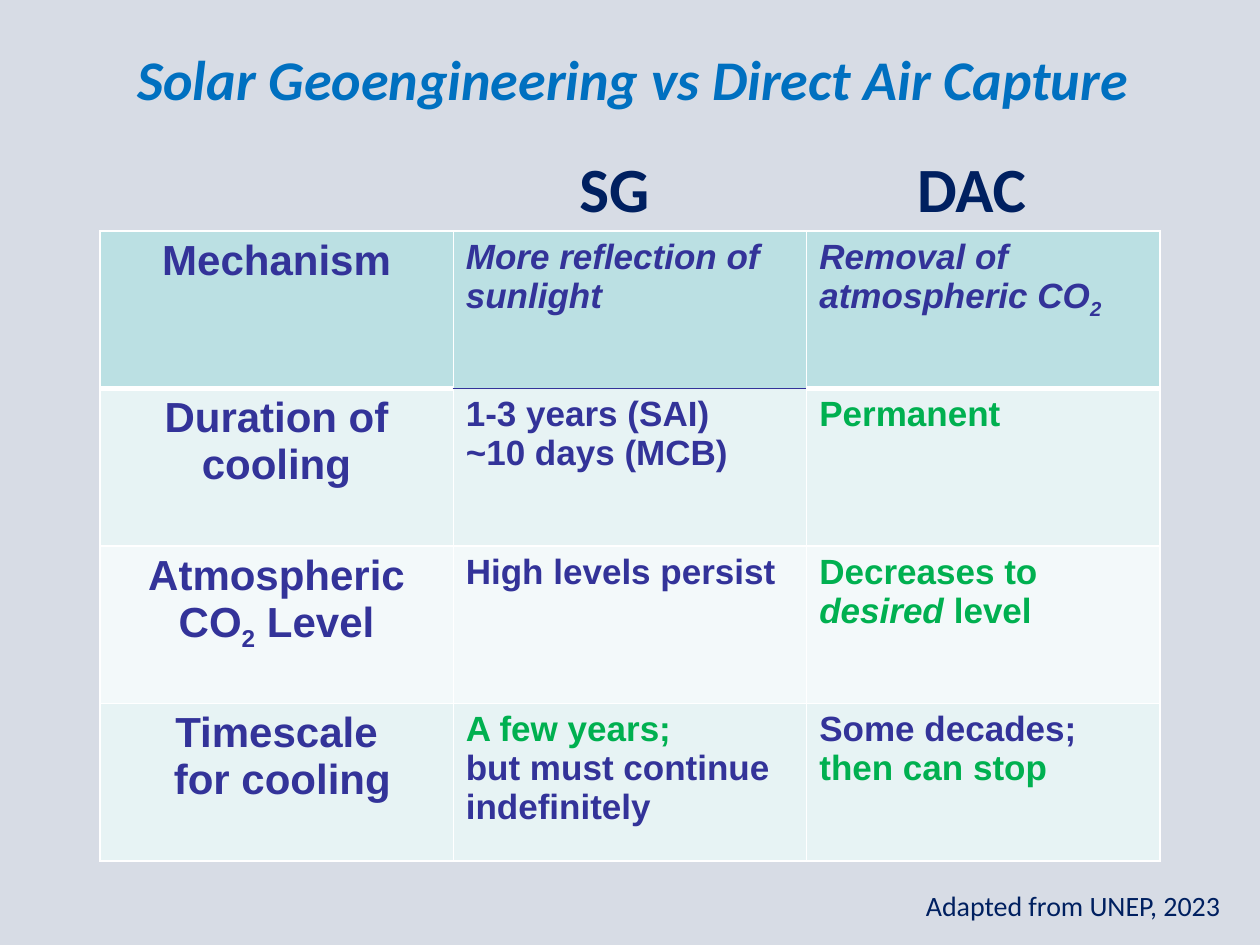
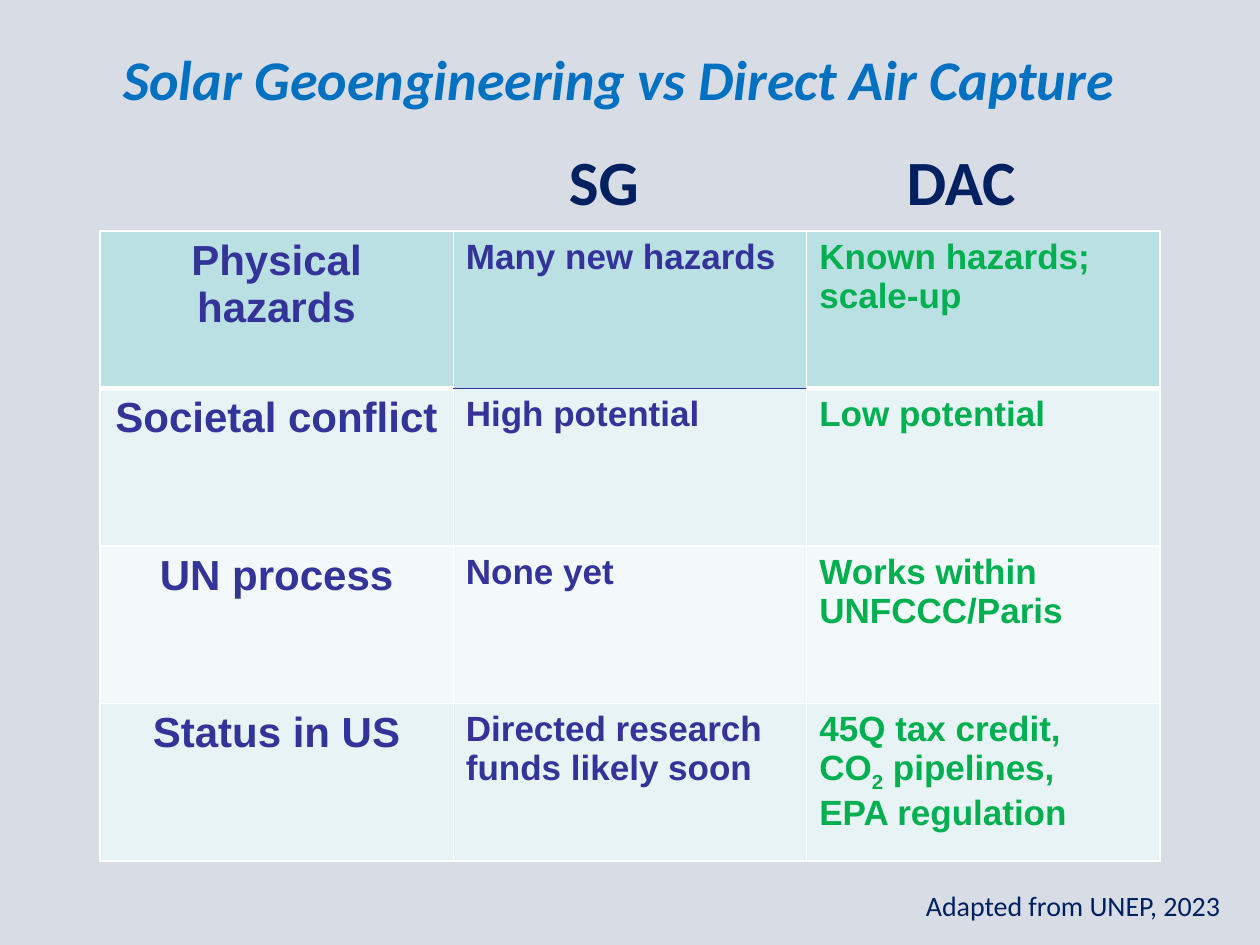
from dataclasses import dataclass

from lxml.etree import SubElement
from pptx import Presentation
from pptx.dml.color import RGBColor
from pptx.enum.text import PP_ALIGN as Align
from pptx.oxml.ns import qn
from pptx.util import Pt


@dataclass(frozen=True)
class Theme:
    background: str = "D7DCE5"
    title: str = "0070C0"
    navy: str = "002060"
    indigo: str = "333399"
    green: str = "00B050"
    border: str = "FFFFFF"
    row_fills: tuple = ("BBE0E3", "E7F3F4", "F3F9FA", "E7F3F4")
    heading_font: str = "Calibri"
    table_font: str = "Arial"
    title_size: int = 32
    column_size: int = 36
    topic_size: int = 24
    cell_size: int = 20
    source_size: int = 16


theme = Theme()
TITLE = "Solar Geoengineering vs Direct Air Capture"
COLUMN_HEADS = "SG\tDAC"
SOURCE = "Adapted from UNEP, 2023"
COLUMN_WIDTH, ROW_HEIGHT = 202, 90

# Each cell is a list of paragraphs, each paragraph a list of (text, marks);
# marks: g = green, i = italic, s = subscript
comparisons = [
    {
        "title_left": 71.3, "heads_at": (324, 82),
        "rows": [
            [[[("Mechanism", "")]],
             [[("More reflection of sunlight", "i")]],
             [[("Removal of atmospheric CO", "i"), ("2", "is")]]],
            [[[("Duration of cooling", "")]],
             [[("1-3 years (SAI)", "")], [("~10 days (MCB)", "")]],
             [[("Permanent", "g")]]],
            [[[("Atmospheric CO", ""), ("2", "s"), (" Level", "")]],
             [[("High levels persist", "")]],
             [[("Decreases to ", "g"), ("desired", "gi"), (" level", "g")]]],
            [[[("Timescale", "")], [(" for cooling", "")]],
             [[("A few years;", "g")], [("but must continue indefinitely", "")]],
             [[("Some decades;", "")], [("then can stop", "g")]]],
        ],
    },
    {
        "title_left": 63.4, "heads_at": (318, 77.8),
        "rows": [
            [[[("Physical hazards", "")]],
             [[("Many new hazards", "")]],
             [[("Known hazards; scale-up", "g")]]],
            [[[("Societal conflict", "")]],
             [[("High potential", "")]],
             [[("Low potential", "g")]]],
            [[[("UN process", "")]],
             [[("None yet", "")]],
             [[("Works within UNFCCC/Paris", "g")]]],
            [[[("Status in US", "")]],
             [[("Directed research", "")], [("funds likely soon", "")]],
             [[("45Q tax credit,", "g")],
              [("CO", "g"), ("2", "gs"), (" pipelines,", "g")],
              [("EPA regulation", "g")]]],
        ],
    },
]


def add_heading(page, text, left, top, width, height, size, color):
    box = page.shapes.add_textbox(Pt(left), Pt(top), Pt(width), Pt(height))
    box.text_frame.word_wrap = True
    box.text_frame.text = text
    para = box.text_frame.paragraphs[0]
    font = para.runs[0].font
    font.name, font.size = theme.heading_font, Pt(size)
    font.color.rgb = RGBColor.from_string(color)
    return para


def add_border(cell, side, color, width):
    line = SubElement(cell._tc.get_or_add_tcPr(), qn(f"a:ln{side}"), w=str(Pt(width)))
    fill = SubElement(line, qn("a:solidFill"))
    SubElement(fill, qn("a:srgbClr"), val=color)


deck = Presentation()
deck.slide_width, deck.slide_height = Pt(720), Pt(540)

for comparison in comparisons:
    page = deck.slides.add_slide(deck.slide_layouts[6])
    page.background.fill.solid()
    page.background.fill.fore_color.rgb = RGBColor.from_string(theme.background)

    # Title
    para = add_heading(page, TITLE, comparison["title_left"], 21.6, 593, 46,
                       theme.title_size, theme.title)
    para.runs[0].font.bold = para.runs[0].font.italic = True

    # Comparison table
    rows = comparison["rows"]
    frame = page.shapes.add_table(len(rows), 3, Pt(57), Pt(132),
                                  Pt(3 * COLUMN_WIDTH), Pt(len(rows) * ROW_HEIGHT))
    table = frame.table
    table.first_row = table.horz_banding = False
    for row_index, row in enumerate(rows):
        for column_index, paragraphs in enumerate(row):
            cell = table.cell(row_index, column_index)
            is_topic = column_index == 0

            # Borders: the line under the first row is indigo in the middle
            plain = (theme.border, 1)
            divider = (theme.indigo, 1) if column_index == 1 else (theme.border, 3)
            add_border(cell, "L", *plain)
            add_border(cell, "R", *plain)
            add_border(cell, "T", *(divider if row_index == 1 else plain))
            add_border(cell, "B", *(divider if row_index == 0 else plain))
            cell.fill.solid()
            cell.fill.fore_color.rgb = RGBColor.from_string(theme.row_fills[row_index])

            # Cell text
            for index, pieces in enumerate(paragraphs):
                text_frame = cell.text_frame
                para = text_frame.add_paragraph() if index else text_frame.paragraphs[0]
                para.alignment = Align.CENTER if is_topic else Align.LEFT
                for text, marks in pieces:
                    span = para.add_run()
                    span.text = text
                    font = span.font
                    font.name, font.bold = theme.table_font, True
                    font.italic = "i" in marks
                    font.size = Pt(theme.topic_size if is_topic else theme.cell_size)
                    color = theme.green if "g" in marks else theme.indigo
                    font.color.rgb = RGBColor.from_string(color)
                    if "s" in marks:
                        span._r.get_or_add_rPr().set("baseline", "-25000")

    # Column heads, set apart by one tab stop
    para = add_heading(page, COLUMN_HEADS, *comparison["heads_at"], 280, 51,
                       theme.column_size, theme.navy)
    tab_list = SubElement(para._p.get_or_add_pPr(), qn("a:tabLst"))
    SubElement(tab_list, qn("a:tab"), pos=str(Pt(193)), algn="l")
    for span in para.runs:
        span.font.bold = True

    # Source line
    add_heading(page, SOURCE, 522, 504, 190, 26.6, theme.source_size, theme.navy)

deck.save("out.pptx")
